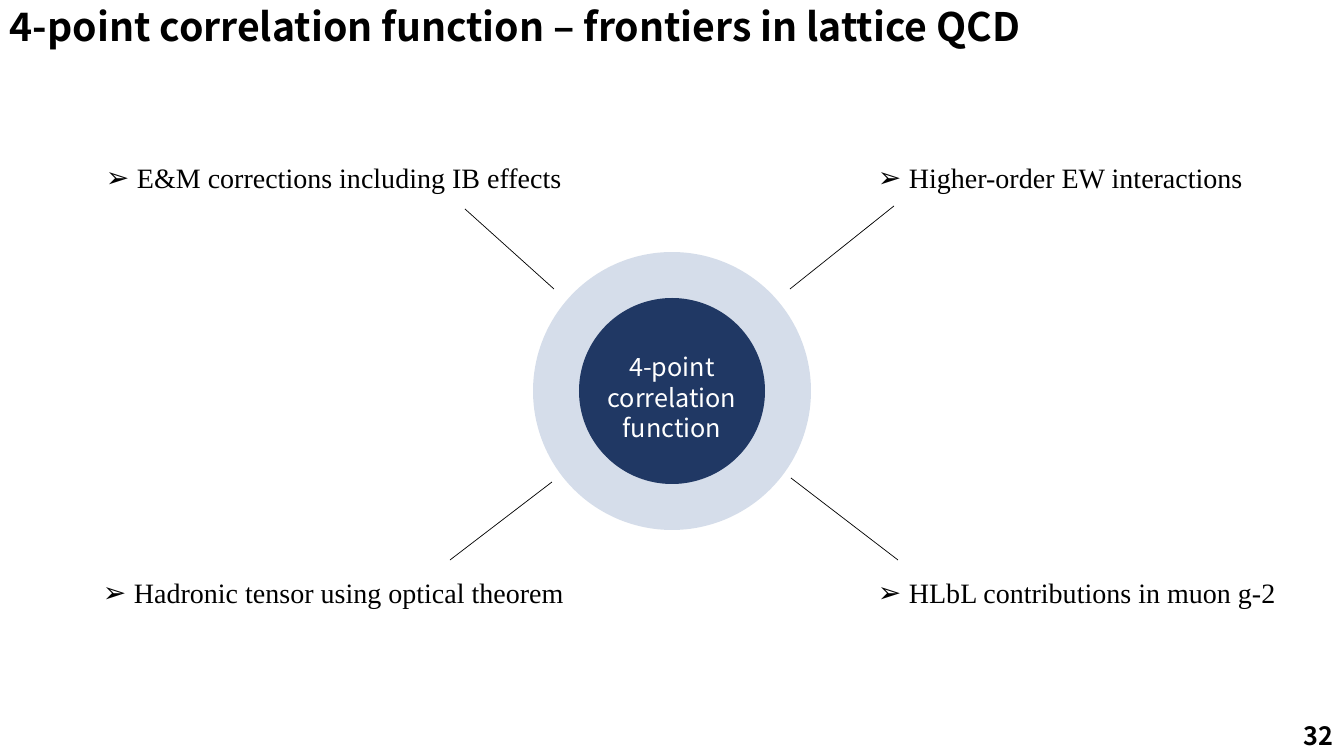
from lxml import etree
from pptx import Presentation
from pptx import util as u
from pptx.dml.color import RGBColor
from pptx.enum import shapes, text
from pptx.oxml.ns import qn

PX = 914400 / 100.8
COLORS = {"black": "000000", "white": "FFFFFF", "ring": "2F5597", "core": "203864"}
SANS, SERIF = "Noto Sans CJK SC", "Times New Roman"


def px(*lengths):
    return [u.Emu(round(n * PX)) for n in lengths]


def add_text(parent, box, words, size, font, color="black", bold=False,
             align=text.PP_ALIGN.LEFT, line=None, bullet=None):
    tf = parent.add_textbox(*px(*box)).text_frame
    tf.word_wrap = bullet is None
    p = tf.paragraphs[0]
    p.text = words
    p.alignment = align
    if line:
        p.line_spacing = u.Pt(line)
    if bullet:
        tf.auto_size = text.MSO_AUTO_SIZE.SHAPE_TO_FIT_TEXT
        pPr = p._p.get_or_add_pPr()
        indent = px(31)[0]
        pPr.set("marL", str(indent))
        pPr.set("indent", str(-indent))
        etree.SubElement(pPr, qn("a:buFont"), typeface="Arial")
        etree.SubElement(pPr, qn("a:buChar"), char=bullet)
    r = p.runs[0]
    r.font.name, r.font.size, r.font.bold = font, u.Pt(size), bold
    r.font.color.rgb = RGBColor.from_string(COLORS[color])
    etree.SubElement(r._r.get_or_add_rPr(), qn("a:ea"), typeface=font)


prs = Presentation()
prs.slide_width, prs.slide_height = px(1344, 756)
slide = prs.slides.add_slide(prs.slide_layouts[6])

# Title
add_text(slide.shapes, (0, 0, 1159, 72),
         "4-point correlation function – frontiers in lattice QCD",
         28, SANS, bold=True, line=32)

# Central hub: pale ring, dark core, caption
hub = slide.shapes.add_group_shape().shapes
for radius, color, alpha in [(139, "ring", 20), (93, "core", 100)]:
    sp = hub.add_shape(shapes.MSO_SHAPE.OVAL,
                       *px(672 - radius, 391 - radius, 2 * radius, 2 * radius))
    sp.shadow.inherit = False
    sp.fill.solid()
    sp.fill.fore_color.rgb = RGBColor.from_string(COLORS[color])
    sp.line.fill.background()
    if alpha < 100:
        clr = sp._element.spPr.find(".//" + qn("a:srgbClr"))
        etree.SubElement(clr, qn("a:alpha"), val=str(alpha * 1000))
add_text(hub, (594, 347, 156, 102), "4-point correlation function", 18, SANS,
         color="white", align=text.PP_ALIGN.CENTER, line=21.5)

# Topics around the hub
topics = [
    (96, 156, 480, "E&M corrections including IB effects"),
    (868, 156, 388, "Higher-order EW interactions"),
    (93, 571, 485, "Hadronic tensor using optical theorem"),
    (868, 571, 421, "HLbL contributions in muon g-2"),
]
for left, top, width, words in topics:
    add_text(slide.shapes, (left, top, width, 44), words, 20, SERIF, bullet="➢")

# Spokes between hub and topics
for ends in [(554, 289, 465, 209), (894, 206, 790, 289),
             (552, 482, 450, 560), (791, 478, 898, 560)]:
    spoke = slide.shapes.add_connector(shapes.MSO_CONNECTOR.STRAIGHT, *px(*ends))
    spoke.line.color.rgb = RGBColor.from_string(COLORS["black"])
    spoke.line.width = u.Pt(0.5)
    etree.SubElement(spoke._element.spPr, qn("a:effectLst"))

# Page number
add_text(slide.shapes, (1041, 716, 302, 40), "32", 18, SANS, bold=True,
         align=text.PP_ALIGN.RIGHT, line=21.5)

prs.save("out.pptx")
